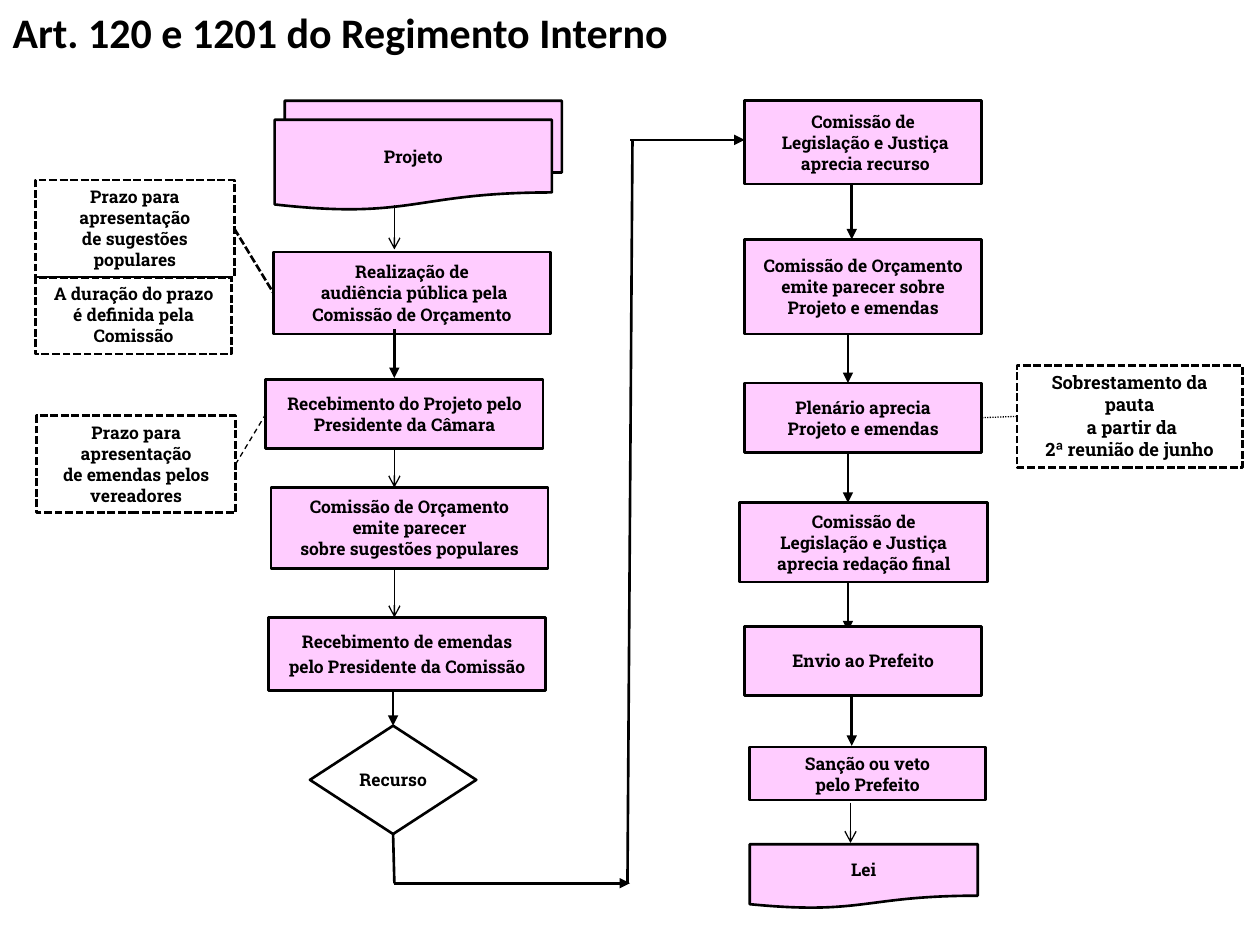
from lxml import etree
from pptx import Presentation
from pptx import util as u
from pptx.dml.color import RGBColor
from pptx.enum import dml, shapes, text
from pptx.oxml import ns

PX = 9144  # 100 px to the inch
BLACK = RGBColor(0x00, 0x00, 0x00)
WHITE = RGBColor(0xFF, 0xFF, 0xFF)
PINK = RGBColor(0xFF, 0xCC, 0xFF)
BODY = "Roboto Slab"
BOLD, THIN = 1.5, 0.75

RECT = shapes.MSO_SHAPE.RECTANGLE
DOC = shapes.MSO_SHAPE.FLOWCHART_DOCUMENT
DIAMOND = shapes.MSO_SHAPE.FLOWCHART_DECISION
DASH = dml.MSO_LINE.DASH
SQUARE = dml.MSO_LINE.SQUARE_DOT
ROUND = dml.MSO_LINE.ROUND_DOT
TOP, LEFT, BOTTOM, RIGHT = range(4)

# name: kind, place, fill, text
STEPS = {
    "copy": (DOC, (226, 80, 220, 71), PINK, ""),
    "project": (DOC, (218, 95, 220, 72), PINK, "Projeto"),
    "hearing": (RECT, (217, 200, 220, 65), PINK,
                "Realização de\n audiência pública pela\nComissão de Orçamento"),
    "receipt": (RECT, (211, 301, 220, 55), PINK,
                "Recebimento do Projeto pelo\nPresidente da Câmara"),
    "opinion": (RECT, (215, 387, 220, 64), PINK,
                "Comissão de Orçamento\nemite parecer\nsobre sugestões populares"),
    "changes": (RECT, (213, 490, 220, 58), PINK,
                "Recebimento de emendas\npelo Presidente da Comissão"),
    "appeal": (DIAMOND, (246, 576, 132, 86), WHITE, "Recurso"),
    "justice": (RECT, (591, 80, 188, 66), PINK,
                "Comissão de\n Legislação e Justiça\n aprecia recurso"),
    "budget": (RECT, (591, 190, 188, 75), PINK,
               "Comissão de Orçamento\nemite parecer sobre\nProjeto e emendas"),
    "plenary": (RECT, (591, 304, 188, 55), PINK,
                "Plenário aprecia\nProjeto e emendas"),
    "wording": (RECT, (587, 399, 197, 63), PINK,
                "Comissão de\nLegislação e Justiça\naprecia redação final"),
    "sending": (RECT, (591, 497, 188, 55), PINK, "Envio ao Prefeito"),
    "sanction": (RECT, (595, 593, 187, 42), PINK,
                 "Sanção ou veto\npelo Prefeito"),
    "law": (DOC, (595, 670, 181, 51), PINK, "Lei"),
}

# name: place, text size, text
NOTES = {
    "ideas": ((28, 143, 158, 77), 10,
              "Prazo para apresentação\nde sugestões populares"),
    "term": ((28, 220, 156, 61), 10,
             "A duração do prazo é definida pela Comissão"),
    "edits": ((29, 330, 158, 77), 10,
              "Prazo para apresentação\nde emendas pelos vereadores"),
    "halt": ((807, 290, 179, 81), 10.5,
             "Sobrestamento da pauta\n a partir da\n2ª reunião de junho"),
}

# x, top, bottom of the downward arrows
RIGHT_BOLD = [(676, 146, 190), (673, 265, 304), (673, 359, 399),
              (673, 461, 501), (676, 553, 592)]
THIN_DOWN = [(313, 163, 198), (313, 356, 387), (313, 452, 490),
             (675, 637, 669)]

# note, step, weight, dash
TIES = [("ideas", "hearing", BOLD, SQUARE), ("edits", "receipt", THIN, DASH)]


def px(*vals):
    return [u.Emu(v * PX) for v in vals]


def style(line, weight, dash=None):
    line.color.rgb = BLACK
    line.width = u.Pt(weight)
    if dash is not None:
        line.dash_style = dash


def write(frame, words, size, font=BODY, align=text.PP_ALIGN.CENTER, gap=0):
    frame.text = words
    for para in frame.paragraphs:
        para.alignment = align
        para.space_before = u.Pt(gap)
        for run in para.runs:
            run.font.size = u.Pt(size)
            run.font.name = font
            run.font.bold = True
            run.font.color.rgb = BLACK


def add_title(slide, words):
    title = slide.shapes.title
    title.left, title.top, title.width, title.height = px(0, 0, 616, 50)
    frame = title.text_frame
    write(frame, words, 24, "Calibri", text.PP_ALIGN.LEFT)
    frame.word_wrap = False
    frame.auto_size = text.MSO_AUTO_SIZE.SHAPE_TO_FIT_TEXT
    frame.vertical_anchor = text.MSO_ANCHOR.TOP


def add_step(slide, kind, place, fill, words, gap=0):
    step = slide.shapes.add_shape(kind, *px(*place))
    step.shadow.inherit = False
    step.fill.solid()
    step.fill.fore_color.rgb = fill
    style(step.line, BOLD)
    if words:
        frame = step.text_frame
        write(frame, words, 10, gap=gap)
        frame.word_wrap = False
        frame.vertical_anchor = text.MSO_ANCHOR.MIDDLE
    return step


def add_note(slide, place, size, words):
    note = slide.shapes.add_shape(RECT, *px(*place))
    note.shadow.inherit = False
    note.fill.background()
    style(note.line, BOLD, SQUARE)
    frame = note.text_frame
    write(frame, words, size)
    frame.word_wrap = True
    frame.auto_size = text.MSO_AUTO_SIZE.SHAPE_TO_FIT_TEXT
    frame.vertical_anchor = text.MSO_ANCHOR.TOP
    return note


def add_line(slide, ends=(0, 0, 0, 0), weight=BOLD, head=None, dash=None,
             start=None, stop=None):
    """Draw a line; start and stop are (shape, side) pairs to join."""
    link = slide.shapes.add_connector(shapes.MSO_CONNECTOR.STRAIGHT, *px(*ends))
    if start:
        link.begin_connect(*start)
    if stop:
        link.end_connect(*stop)
    style(link.line, weight, dash)
    if head:
        tail = etree.SubElement(link.line._get_or_add_ln(), ns.qn("a:tailEnd"))
        tail.set("type", head)
    etree.SubElement(link._element.spPr, ns.qn("a:effectLst"))


def add_ties(slide, steps, notes):
    for note, step, weight, dash in TIES:
        add_line(slide, weight=weight, dash=dash,
                 start=(notes[note], RIGHT), stop=(steps[step], LEFT))
    add_line(slide, weight=THIN, dash=ROUND,
             start=(notes["halt"], LEFT), stop=(steps["plenary"], RIGHT))


def add_route(slide, appeal):
    """Lead from the appeal to the head of the right column."""
    add_line(slide, (312, 662, 313, 701), start=(appeal, BOTTOM))
    add_line(slide, (313, 701, 500, 701), head="triangle")
    add_line(slide, (502, 111, 498, 701))
    add_line(slide, (500, 111, 591, 111), head="triangle")


def main():
    deck = Presentation()
    deck.slide_width, deck.slide_height = px(1000, 750)
    slide = deck.slides.add_slide(deck.slide_layouts[5])
    add_title(slide, "Art. 120 e 1201 do Regimento Interno")
    for x, top, end in RIGHT_BOLD:
        add_line(slide, (x, top, x, end), head="triangle")
    steps = {name: add_step(slide, *step, gap=2 if name == "changes" else 0)
             for name, step in STEPS.items()}
    notes = {name: add_note(slide, *note) for name, note in NOTES.items()}
    for x, top, end in THIN_DOWN:
        add_line(slide, (x, top, x, end), THIN, "arrow")
    add_line(slide, (313, 261, 313, 300), head="triangle")
    add_line(slide, (312, 548, 312, 576), head="triangle",
             stop=(steps["appeal"], TOP))
    add_route(slide, steps["appeal"])
    add_ties(slide, steps, notes)
    deck.save("out.pptx")


if __name__ == "__main__":
    main()
